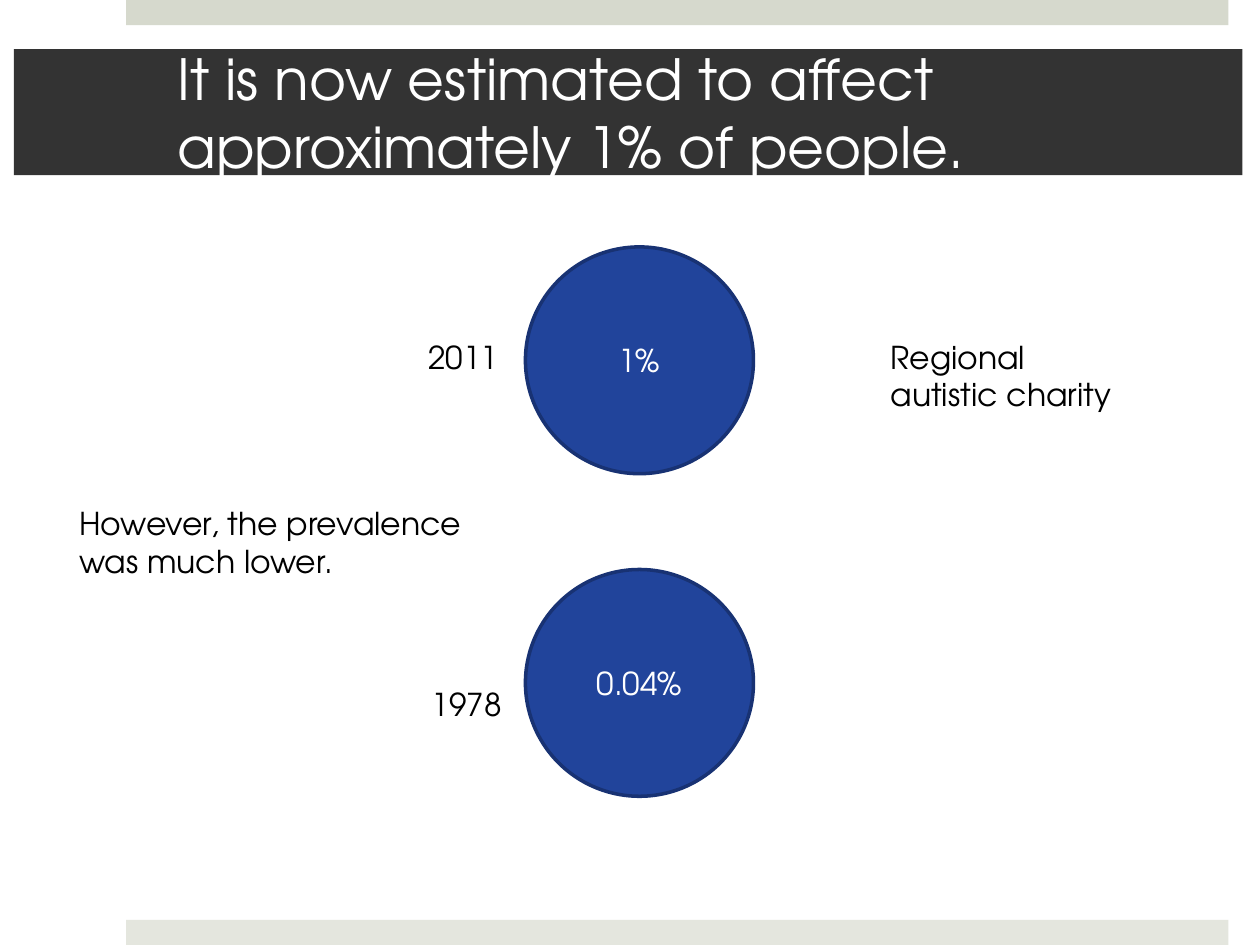
from pptx import Presentation
from pptx.dml.color import RGBColor
from pptx.enum.shapes import MSO_SHAPE
from pptx.enum.text import MSO_ANCHOR, MSO_AUTO_SIZE, PP_ALIGN
from pptx.util import Inches, Pt

COLORS = {
    "top": "D6D9CD",
    "base": "E4E6DE",
    "band": "333333",
    "disc": "21449B",
    "rim": "183273",
    "dark": "000000",
    "light": "FFFFFF",
}


def write(frame, text, size=18, color="dark", align=PP_ALIGN.LEFT,
          anchor=MSO_ANCHOR.TOP, font="TeX Gyre Adventor"):
    frame.word_wrap = True
    frame.vertical_anchor = anchor
    par = frame.paragraphs[0]
    par.alignment = align
    run = par.add_run()
    run.text = text
    run.font.name = font
    run.font.size = Pt(size)
    run.font.color.rgb = RGBColor.from_string(COLORS[color])


class Board:
    def __init__(self, slide):
        self.slide = slide

    def shape(self, kind, box, fill):
        item = self.slide.shapes.add_shape(kind, *map(Inches, box))
        item.shadow.inherit = False
        item.fill.solid()
        item.fill.fore_color.rgb = RGBColor.from_string(COLORS[fill])
        item.line.fill.background()
        return item

    def bar(self, box, fill):
        return self.shape(MSO_SHAPE.RECTANGLE, box, fill)

    def title(self, box, text):
        frame = self.bar(box, "band").text_frame
        frame.margin_left = Inches(1.3)
        frame.margin_right = Inches(0.3)
        write(frame, text, size=32.4, color="light", anchor=MSO_ANCHOR.MIDDLE)

    def disc(self, top, text):
        item = self.shape(MSO_SHAPE.OVAL, (4.17, top, 1.81, 1.8), "disc")
        item.line.color.rgb = RGBColor.from_string(COLORS["rim"])
        item.line.width = Pt(2)
        write(item.text_frame, text, color="light", align=PP_ALIGN.CENTER,
              anchor=MSO_ANCHOR.MIDDLE)

    def label(self, box, text):
        frame = self.slide.shapes.add_textbox(*map(Inches, box)).text_frame
        frame.auto_size = MSO_AUTO_SIZE.SHAPE_TO_FIT_TEXT
        write(frame, text)


def main():
    deck = Presentation()
    deck.slide_width = Inches(10)
    deck.slide_height = Inches(7.5)
    board = Board(deck.slides.add_slide(deck.slide_layouts[6]))

    board.bar((1, 0, 8.75, 0.2), "top")
    board.bar((1, 7.3, 8.75, 0.2), "base")
    board.title((0.11, 0.39, 9.75, 1),
                "It is now estimated to affect approximately 1% of people.")
    board.label((3.33, 5.39, 1.97, 0.4), "1978")
    board.disc(4.52, "0.04%")
    board.disc(1.96, "1%")
    board.label((3.3, 2.63, 1.43, 0.4), "2011")
    board.label((0.53, 3.95, 3.64, 0.71),
                "However, the prevalence was much lower.")
    board.label((6.97, 2.63, 2.11, 0.71), "Regional autistic charity")

    deck.save("out.pptx")


if __name__ == "__main__":
    main()
